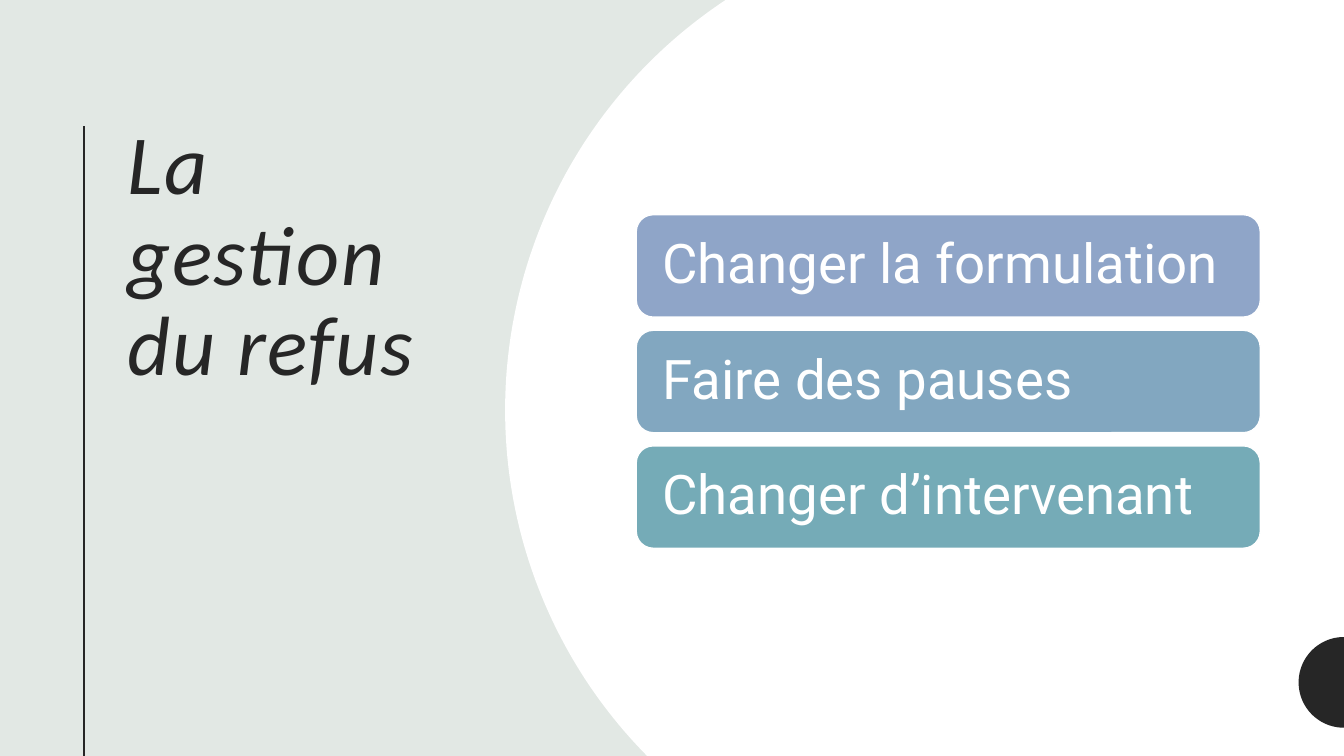
import math

import pptx
import pptx.dml.color
import pptx.enum.shapes
import pptx.enum.text
import pptx.oxml
import pptx.oxml.ns
import pptx.util

Inches = pptx.util.Inches
Pt = pptx.util.Pt

WIDTH, HEIGHT = 13.33, 7.5
SAGE, INK, WHITE = "E2E8E4", "262626", "FFFFFF"
STRATEGIES = [
    ("Changer la formulation", "8FA5C8"),
    ("Faire des pauses", "82A7C0"),
    ("Changer d’intervenant", "75ABB7"),
]


def paint(color_format, color):
    color_format.rgb = pptx.dml.color.RGBColor.from_string(color)


def fill_with(fill, color):
    fill.solid()
    paint(fill.fore_color, color)


def write(frame, text, color, inset, **font_format):
    """Put one left-aligned run in a text frame with equal side insets."""
    frame.word_wrap = True
    frame.margin_left = frame.margin_right = Inches(inset)
    paragraph = frame.paragraphs[0]
    paragraph.alignment = pptx.enum.text.PP_ALIGN.LEFT
    paragraph.line_spacing = 0.9
    run = paragraph.add_run()
    run.text = text
    paint(run.font.color, color)
    for attribute, value in font_format.items():
        setattr(run.font, attribute, value)
    return run


def add_disc_to_edge(slide, center_x, center_y, radius, color, steps=120):
    """Draw the left arc of a disc, kept within the slide and closed along its right edge."""
    start = math.asin(max(-1, -center_y / radius))
    end = math.asin(min(1, (HEIGHT - center_y) / radius))
    angles = [start + (end - start) * step / steps for step in range(steps + 1)]
    arc = [(center_x - radius * math.cos(angle), center_y + radius * math.sin(angle))
           for angle in angles]
    outline = arc + [(WIDTH, arc[-1][1]), (WIDTH, arc[0][1])]
    points = [(Inches(x), Inches(y)) for x, y in outline]
    builder = slide.shapes.build_freeform(*points[0], scale=1.0)
    builder.add_line_segments(points[1:], close=True)
    disc = builder.convert_to_shape()
    disc.shadow.inherit = False
    fill_with(disc.fill, color)
    disc.line.fill.background()


def add_title(slide, left, top, width, height):
    title = slide.shapes.add_textbox(*map(Inches, (left, top, width, height)))
    run = write(title.text_frame, "La gestion du refus", INK, 0.1,
                name="Calibri", size=Pt(60), italic=True)
    run.font._element.set("spc", "100")


def add_title_rule(slide, x, top, bottom):
    rule = slide.shapes.add_connector(
        pptx.enum.shapes.MSO_CONNECTOR.STRAIGHT, *map(Inches, (x, top, x, bottom)))
    paint(rule.line.color, INK)
    rule.line.width = Pt(1.5)
    rule._element.spPr.append(pptx.oxml.parse_xml(
        f"<a:effectLst {pptx.oxml.ns.nsdecls('a')}/>"))


def add_strategies(slide, left, top, width, height, gap=0.13):
    bar_height = (height - gap * (len(STRATEGIES) - 1)) / len(STRATEGIES)
    for index, (strategy, color) in enumerate(STRATEGIES):
        bar_top = top + index * (bar_height + gap)
        bar = slide.shapes.add_shape(
            pptx.enum.shapes.MSO_SHAPE.ROUNDED_RECTANGLE,
            *map(Inches, (left, bar_top, width, bar_height)))
        bar.shadow.inherit = False
        fill_with(bar.fill, color)
        paint(bar.line.color, WHITE)
        bar.line.width = Pt(1)
        bar.text_frame.vertical_anchor = pptx.enum.text.MSO_ANCHOR.MIDDLE
        write(bar.text_frame, strategy, WHITE, 0.21, name="Roboto", size=Pt(39))


def build_refusal_slide(presentation):
    slide = presentation.slides.add_slide(presentation.slide_layouts[6])
    fill_with(slide.background.fill, SAGE)
    add_title(slide, 1.17, 1.16, 3.41, 5.26)
    add_title_rule(slide, 0.83, 1.25, HEIGHT)
    add_disc_to_edge(slide, 9.89, 4.07, 4.88, WHITE)
    add_disc_to_edge(slide, WIDTH, 6.77, 0.45, INK)
    add_strategies(slide, 6.31, 2.13, 6.19, 3.31)


def main():
    presentation = pptx.Presentation()
    presentation.slide_width = Inches(WIDTH)
    presentation.slide_height = Inches(HEIGHT)
    build_refusal_slide(presentation)
    presentation.save("out.pptx")


if __name__ == "__main__":
    main()
